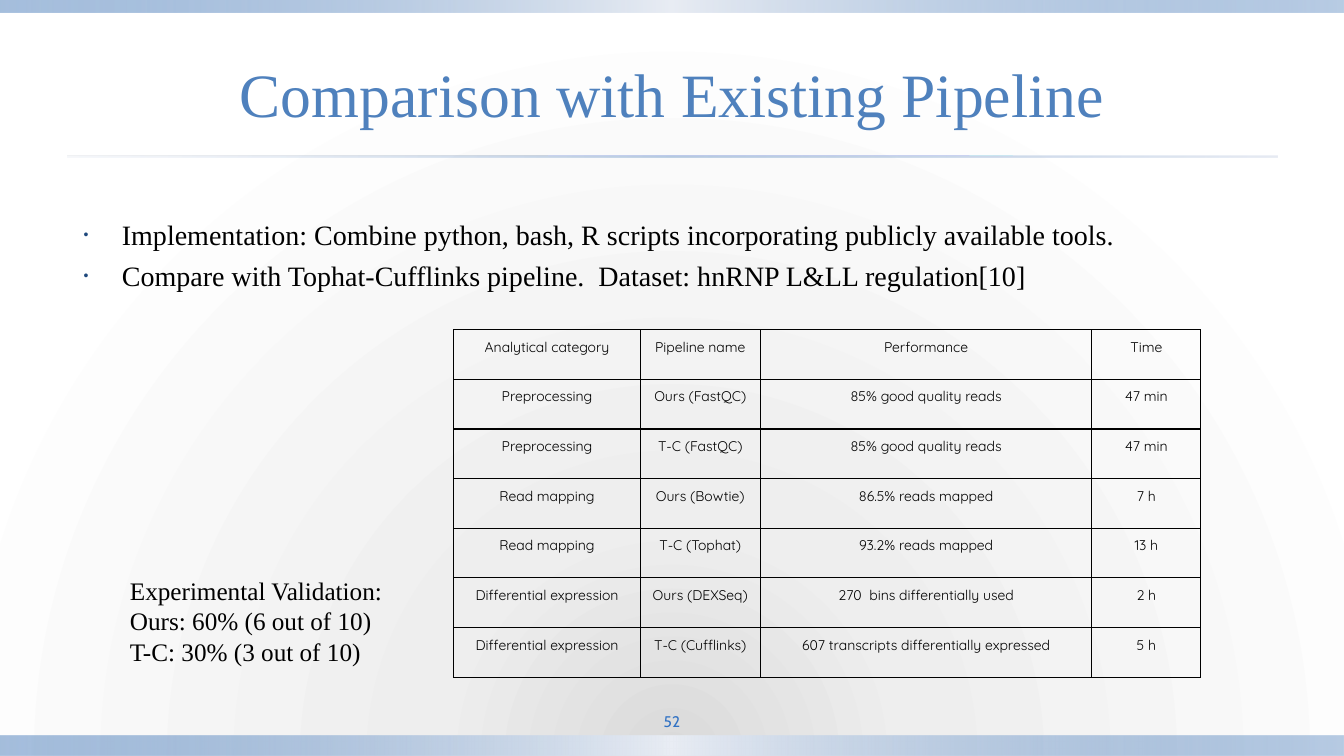
import pptx
import pptx.util
import pptx.dml.color
import pptx.enum.shapes
import pptx.enum.text
import pptx.oxml
import pptx.oxml.ns

Inches, Pt = pptx.util.Inches, pptx.util.Pt
ALIGN = pptx.enum.text.PP_ALIGN
ANCHOR = pptx.enum.text.MSO_ANCHOR
NS = pptx.oxml.ns.nsdecls("a")

TITLE = "Comparison with Existing Pipeline"
POINTS = [
    "Implementation: Combine python, bash, R scripts incorporating publicly available tools.",
    "Compare with Tophat-Cufflinks pipeline.  Dataset: hnRNP L&LL regulation[10]",
]
RESULTS = [
    ("Analytical category", "Pipeline name", "Performance", "Time"),
    ("Preprocessing", "Ours (FastQC)", "85% good quality reads", "47 min"),
    ("Preprocessing", "T-C (FastQC)", "85% good quality reads", "47 min"),
    ("Read mapping", "Ours (Bowtie)", "86.5% reads mapped", "7 h"),
    ("Read mapping", "T-C (Tophat)", "93.2% reads mapped", "13 h"),
    ("Differential expression", "Ours (DEXSeq)", "270  bins differentially used", "2 h"),
    ("Differential expression", "T-C (Cufflinks)", "607 transcripts differentially expressed", "5 h"),
]
CHECKS = ["Experimental Validation:", "Ours: 60% (6 out of 10)", "T-C: 30% (3 out of 10)"]
PAGE = "52"

# Type is (font, size, colour); a gradient stop is (place, colour, opacity).
THEME = {
    "title": ("Times New Roman", 44, "4F81BD"),
    "body": ("Times New Roman", 20, "000000"),
    "check": ("Times New Roman", 18, "000000"),
    "cell": ("Quicksand", 10, "000000"),
    "page": ("Cabin", 11, "3172C4"),
    "bullet": "1F497D",
    "border": "000000",
    "back": [(0, "DADADA", 100), (31, "EEEEEE", 100), (100, "FFFFFF", 100)],
    "band": [(0, "4F81BD", 50), (50, "E9EDF4", 100), (100, "4F81BD", 40)],
    "rule": [(0, "D0D8E8", 20), (50, "4F81BD", 40), (100, "D0D8E8", 50)],
}
WIDE, HIGH = 13.33, 7.5
BARS = [
    ((0, 7.3, WIDE, 0.2), "band"),
    ((0, 0, WIDE, 0.12), "band"),
    ((0.67, 1.54, 12, 0.02), "rule"),
]
COLS = [1.85, 1.19, 3.29, 1.08]
GRID = (4.5, 3.27, sum(COLS), 3.45)
LINEAR = '<a:lin ang="0" scaled="0"/>'
RADIAL = ('<a:path path="circle"><a:fillToRect l="50000" t="150000" '
          'r="50000" b="0"/></a:path>')


def parse(tag, inner="", attrs=""):
    return pptx.oxml.parse_xml(f"<a:{tag} {NS} {attrs}>{inner}</a:{tag}>")


def shade(fill, root, stops, shape):
    """Put a gradient with its own stops in place of the default one."""
    fill.gradient()
    old = next(root.iter(pptx.oxml.ns.qn("a:gradFill")))
    marks = "".join(
        f'<a:gs pos="{at * 1000}"><a:srgbClr val="{tint}">'
        f'<a:alpha val="{clear * 1000}"/></a:srgbClr></a:gs>'
        for at, tint, clear in stops)
    new = parse("gradFill", f"<a:gsLst>{marks}</a:gsLst>{shape}", 'rotWithShape="1"')
    old.getparent().replace(old, new)


def apply(thing, form):
    for name, value in form.items():
        setattr(thing, name, value)


def write(frame, lines, style, form, hang=0):
    font, size, tint = THEME[style]
    for i, line in enumerate(lines):
        para = frame.paragraphs[0] if i == 0 else frame.add_paragraph()
        apply(para, form)
        if hang:
            props = para._p.get_or_add_pPr()
            props.set("marL", str(Inches(hang)))
            props.set("indent", str(-Inches(hang)))
        run = para.add_run()
        run.text = line
        apply(run.font, {"name": font, "size": Pt(size), "bold": False})
        run.font.color.rgb = pptx.dml.color.RGBColor.from_string(tint)


def add_text(slide, box, lines, style, form, frame_form=None, hang=0):
    frame = slide.shapes.add_textbox(*map(Inches, box)).text_frame
    apply(frame, {"word_wrap": True, **(frame_form or {})})
    write(frame, lines, style, form, hang)
    return frame


def add_bar(slide, box, style):
    kind = pptx.enum.shapes.MSO_SHAPE.RECTANGLE
    bar = slide.shapes.add_shape(kind, *map(Inches, box))
    bar.shadow.inherit = False
    bar.line.fill.background()
    shade(bar.fill, bar.element, THEME[style], LINEAR)


def add_bullets(frame):
    for para in frame.paragraphs:
        props = para._p.get_or_add_pPr()
        props.append(parse("buClr", f'<a:srgbClr val="{THEME["bullet"]}"/>'))
        props.append(parse("buSzPct", attrs='val="50000"'))
        props.append(parse("buFont", attrs='typeface="Arial"'))
        props.append(parse("buChar", attrs='char="•"'))


def add_border(cell):
    props = cell._tc.get_or_add_tcPr()
    line = f'<a:solidFill><a:srgbClr val="{THEME["border"]}"/></a:solidFill>'
    for i, side in enumerate(("lnL", "lnR", "lnT", "lnB")):
        props.insert(i, parse(side, line, f'w="{Pt(1)}"'))


def add_results(slide):
    table = slide.shapes.add_table(
        len(RESULTS), len(COLS), *map(Inches, GRID)).table
    apply(table, {"first_row": False, "horz_banding": False})
    for col, width in zip(table.columns, COLS):
        col.width = Inches(width)
    for row in table.rows:
        row.height = Inches(GRID[3] / len(RESULTS))
    edges = {"margin_left": Inches(0.07), "margin_right": Inches(0.07),
             "margin_top": 0, "margin_bottom": 0}
    form = {"alignment": ALIGN.CENTER, "line_spacing": 1.5,
            "space_before": Pt(15), "space_after": Pt(6)}
    for r, row in enumerate(RESULTS):
        for c, text in enumerate(row):
            cell = table.cell(r, c)
            apply(cell, edges)
            cell.fill.background()
            add_border(cell)
            write(cell.text_frame, [text], "cell", form, 0.18)


def main():
    deck = pptx.Presentation()
    apply(deck, {"slide_width": Inches(WIDE), "slide_height": Inches(HIGH)})
    slide = deck.slides.add_slide(deck.slide_layouts[6])
    shade(slide.background.fill, slide.element, THEME["back"], RADIAL)
    for box, style in BARS:
        add_bar(slide, box, style)

    center = {"alignment": ALIGN.CENTER}
    middle = {"vertical_anchor": ANCHOR.MIDDLE}
    sides = ("margin_left", "margin_right", "margin_top", "margin_bottom")
    add_text(slide, (0.67, 0.3, 12, 1.25), [TITLE], "title", center, middle)
    points = add_text(slide, (0.73, 2.11, 10.89, 4.65), POINTS, "body",
                      {"alignment": ALIGN.JUSTIFY, "space_before": Pt(5.5)}, hang=0.38)
    add_bullets(points)
    add_text(slide, (6, 7, 1.33, 0.31), [PAGE], "page", center,
             {**middle, **dict.fromkeys(sides, Inches(0.05))})
    add_results(slide)
    add_text(slide, (1.19, 5.66, 3.09, 1.01), CHECKS, "check",
             {"alignment": ALIGN.LEFT},
             {"auto_size": pptx.enum.text.MSO_AUTO_SIZE.SHAPE_TO_FIT_TEXT})
    deck.save("out.pptx")


if __name__ == "__main__":
    main()
